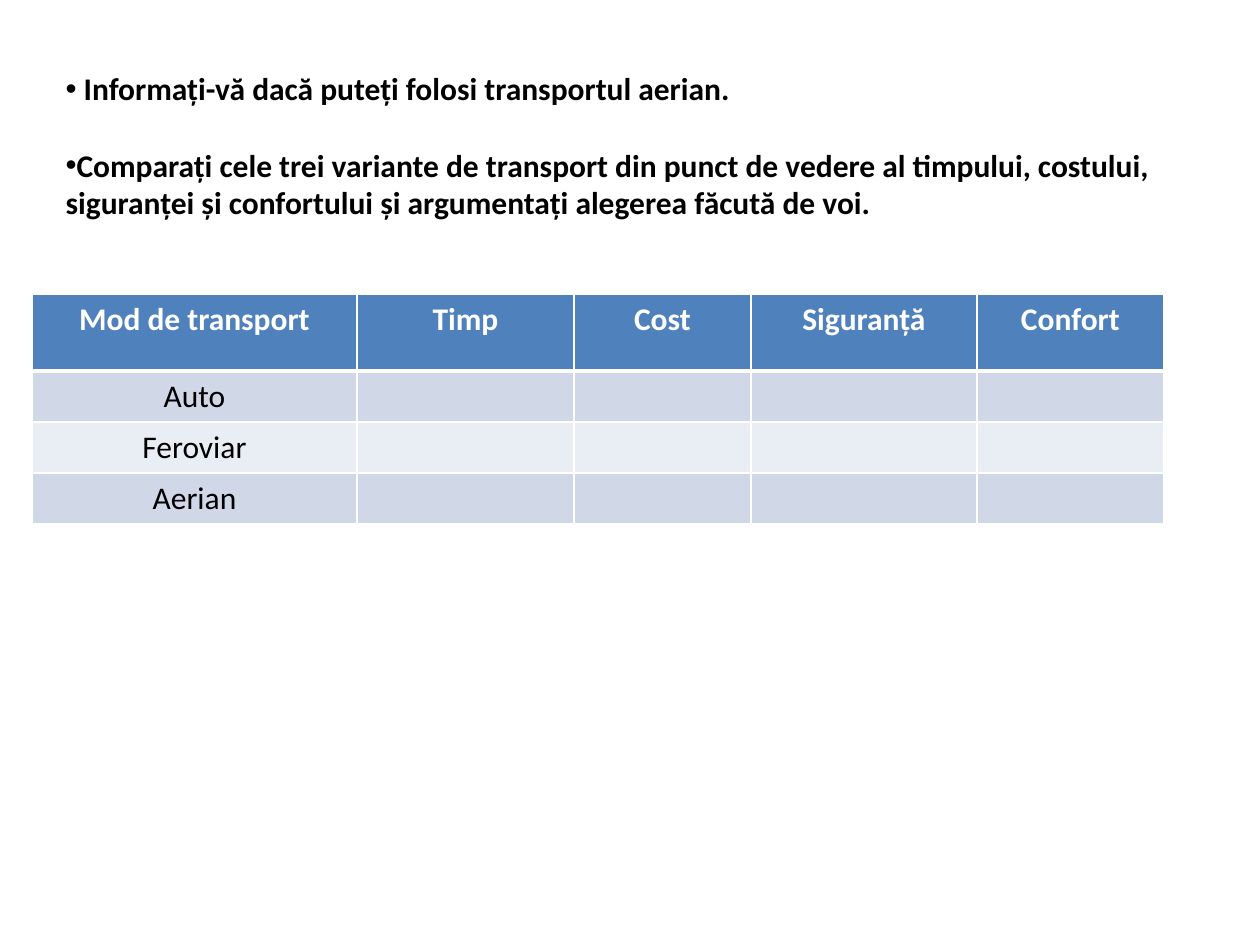
from lxml import etree
from pptx import Presentation
from pptx import util as u
from pptx.dml.color import RGBColor
from pptx.enum import text
from pptx.oxml import ns

WHITE = RGBColor(0xFF, 0xFF, 0xFF)
BLACK = RGBColor(0x00, 0x00, 0x00)
HEADER_BLUE = RGBColor(0x4F, 0x81, 0xBD)
BANDS = (RGBColor(0xD0, 0xD8, 0xE8), RGBColor(0xE9, 0xED, 0xF4))

TASKS = (
    " Informați-vă dacă puteți folosi transportul aerian.",
    "Comparați cele trei variante de transport din punct de vedere al timpului, costului, "
    "siguranței și confortului și argumentați alegerea făcută de voi.",
)
CRITERIA = ("Mod de transport", "Timp", "Cost", "Siguranță", "Confort")
TRANSPORT_MODES = ("Auto", "Feroviar", "Aerian")
COLUMN_WIDTHS = (325, 217, 177, 226, 187)
HEADER_HEIGHT = 77
ROW_HEIGHT = 51


def px(length):
    return u.Emu(round(length * 914400 / 126))


class SlideBuilder:
    font_format = {"name": "Calibri", "size": u.Pt(18)}

    def __init__(self, slide):
        self.slide = slide

    def format_text(self, paragraph, color, bold):
        for name, value in {**self.font_format, "bold": bold}.items():
            setattr(paragraph.font, name, value)
        paragraph.font.color.rgb = color

    def bullet_list(self, items, left, top, width, height, gap):
        body = self.slide.placeholders[1]
        box = {"left": left, "top": top, "width": width, "height": height}
        for name, value in box.items():
            setattr(body, name, px(value))
        frame = body.text_frame
        frame_format = {
            "word_wrap": True,
            "vertical_anchor": text.MSO_ANCHOR.TOP,
            "auto_size": text.MSO_AUTO_SIZE.SHAPE_TO_FIT_TEXT,
        }
        for name, value in frame_format.items():
            setattr(frame, name, value)
        frame.text = "\n".join(items)
        for index, paragraph in enumerate(frame.paragraphs):
            paragraph.space_before = u.Pt(gap if index else 0)
            properties = paragraph._p.get_or_add_pPr()
            for name in ("marL", "indent"):
                properties.set(name, "0")
            self.format_text(paragraph, BLACK, True)

    def border(self, cell, side, points):
        line = etree.SubElement(
            cell._tc.get_or_add_tcPr(), ns.qn(f"a:ln{side}"), w=str(u.Pt(points))
        )
        fill = etree.SubElement(line, ns.qn("a:solidFill"))
        etree.SubElement(fill, ns.qn("a:srgbClr"), val=str(WHITE))

    def cell(self, cell, wording, row):
        header = row == 0
        widths = {"L": 1, "R": 1, "T": 3 if row == 1 else 1, "B": 3 if header else 1}
        for side, points in widths.items():
            self.border(cell, side, points)
        cell.fill.solid()
        cell.fill.fore_color.rgb = HEADER_BLUE if header else BANDS[(row - 1) % 2]
        cell.text = wording
        paragraph = cell.text_frame.paragraphs[0]
        paragraph.alignment = text.PP_ALIGN.CENTER
        self.format_text(paragraph, WHITE if header else BLACK, header)

    def table(self, rows, left, top, widths, heights):
        frame = self.slide.shapes.add_table(
            len(rows), len(widths), px(left), px(top), px(sum(widths)), px(sum(heights))
        )
        table = frame.table
        for column, width in zip(table.columns, widths):
            column.width = px(width)
        for row, height in zip(table.rows, heights):
            row.height = px(height)
        for row, wordings in enumerate(rows):
            for column, wording in enumerate(wordings):
                self.cell(table.cell(row, column), wording, row)


def main():
    presentation = Presentation()
    presentation.slide_width = u.Inches(10)
    presentation.slide_height = u.Inches(7.5)
    slide = presentation.slides.add_slide(presentation.slide_layouts[1])
    title = slide.shapes.title._element
    title.getparent().remove(title)

    builder = SlideBuilder(slide)
    blanks = ("",) * (len(CRITERIA) - 1)
    rows = [CRITERIA] + [(mode, *blanks) for mode in TRANSPORT_MODES]
    heights = [HEADER_HEIGHT] + [ROW_HEIGHT] * len(TRANSPORT_MODES)
    builder.table(rows, 32, 294, COLUMN_WIDTHS, heights)
    builder.bullet_list(TASKS, 53, 63, 1144, 165, gap=22)
    presentation.save("out.pptx")


if __name__ == "__main__":
    main()
